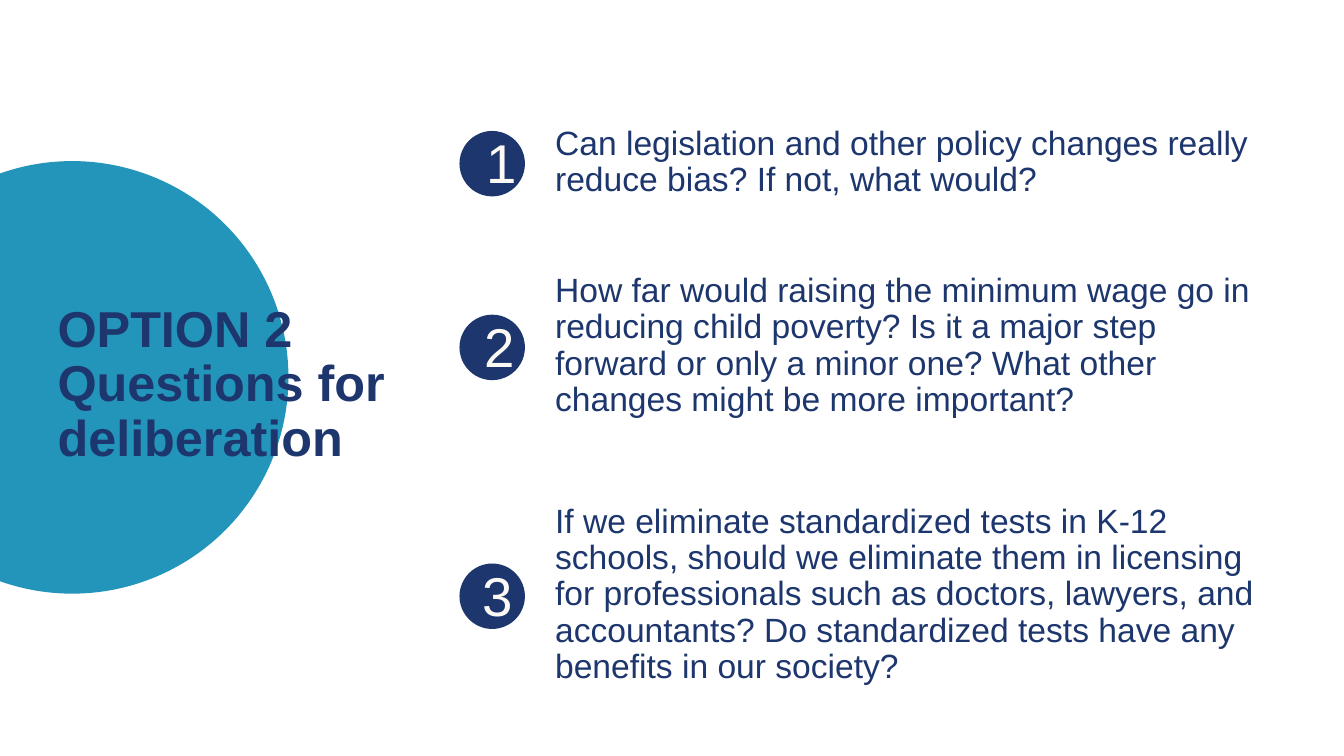
from dataclasses import dataclass

from pptx import Presentation
from pptx.dml.color import RGBColor
from pptx.enum.shapes import MSO_SHAPE
from pptx.enum.text import MSO_ANCHOR, MSO_AUTO_SIZE, PP_ALIGN
from pptx.util import Cm, Pt


@dataclass(frozen=True)
class Theme:
    """Colours, font and type sizes of the slide."""
    navy: str = "1D366D"
    teal: str = "2395BA"
    cream: str = "FDFAF5"
    font: str = "Arial"
    title_size: int = 36
    number_size: int = 39
    question_size: int = 24


THEME = Theme()
TITLE_LINES = ["OPTION 2", "Questions for deliberation"]
BADGE_LEFT = 11.58
BADGE_SIZE = 1.65
QUESTIONS = [
    ("1", 3.3, 12.01, 18.08,
     "Can legislation and other policy changes really reduce bias? "
     "If not, what would?"),
    ("2", 7.93, 11.96, 18.47,
     "How far would raising the minimum wage go in reducing child poverty? "
     "Is it a major step forward or only a minor one? "
     "What other changes might be more important?"),
    ("3", 14.2, 11.91, 18.47,
     "If we eliminate standardized tests in K-12 schools, should we eliminate "
     "them in licensing for professionals such as doctors, lawyers, and "
     "accountants? Do standardized tests have any benefits in our society?"),
]


def write_text(frame, lines, *, size, color, bold=False, spacing=None,
               anchor=MSO_ANCHOR.MIDDLE):
    """Fill a text frame with left-aligned paragraphs in one format."""
    frame.word_wrap = True
    frame.auto_size = MSO_AUTO_SIZE.NONE
    frame.vertical_anchor = anchor
    for index, line in enumerate(lines):
        paragraph = frame.add_paragraph() if index else frame.paragraphs[0]
        paragraph.alignment = PP_ALIGN.LEFT
        paragraph.line_spacing = spacing
        run = paragraph.add_run()
        run.text = line
        run.font.name = THEME.font
        run.font.size = Pt(size)
        run.font.bold = bold
        run.font.color.rgb = RGBColor.from_string(color)


def add_circle(shapes, left, top, diameter, color):
    """Add a plain filled circle, measured in centimetres."""
    circle = shapes.add_shape(MSO_SHAPE.OVAL, Cm(left), Cm(top),
                              Cm(diameter), Cm(diameter))
    circle.shadow.inherit = False
    circle.fill.solid()
    circle.fill.fore_color.rgb = RGBColor.from_string(color)
    circle.line.fill.background()
    return circle


def add_title(slide):
    """Place the title in front of its large circle."""
    title = slide.shapes.title
    title.left, title.top, title.width, title.height = (
        Cm(1.37), Cm(7.57), Cm(9.35), Cm(4.29))
    frame = title.text_frame
    frame.margin_left = frame.margin_right = Cm(0.08)
    frame.margin_top = frame.margin_bottom = Cm(0.08)
    write_text(frame, TITLE_LINES, size=THEME.title_size, color=THEME.navy,
               bold=True, spacing=0.9, anchor=MSO_ANCHOR.TOP)
    circle = add_circle(slide.shapes, -3.63, 4.06, 10.9, THEME.teal)
    title.element.addprevious(circle.element)


def add_question(slide, number, top, number_left, width, question):
    """Group a numbered badge with its question."""
    shapes = slide.shapes.add_group_shape().shapes
    add_circle(shapes, BADGE_LEFT, top, BADGE_SIZE, THEME.navy)
    number_box = shapes.add_textbox(Cm(number_left), Cm(top - 0.49),
                                    Cm(1.65), Cm(2.54))
    write_text(number_box.text_frame, [number], size=THEME.number_size,
               color=THEME.cream)
    question_box = shapes.add_textbox(Cm(13.74), Cm(top - 0.27),
                                      Cm(width), Cm(2.13))
    write_text(question_box.text_frame, [question], size=THEME.question_size,
               color=THEME.navy, spacing=0.9)


def main():
    """Build and save the slide."""
    presentation = Presentation()
    presentation.slide_width, presentation.slide_height = Cm(33.87), Cm(19.05)
    slide = presentation.slides.add_slide(
        presentation.slide_layouts.get_by_name("Title Only"))
    add_title(slide)
    for question in QUESTIONS:
        add_question(slide, *question)
    presentation.save("out.pptx")


if __name__ == "__main__":
    main()
